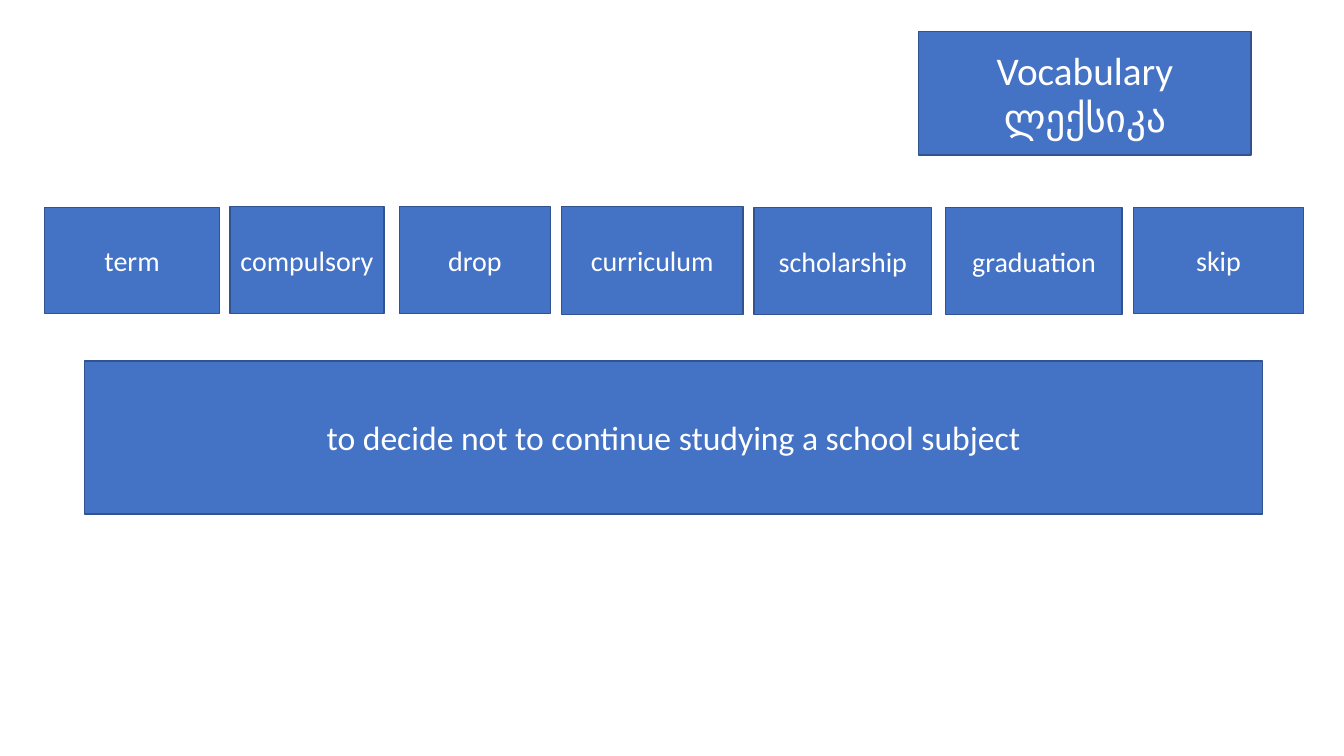
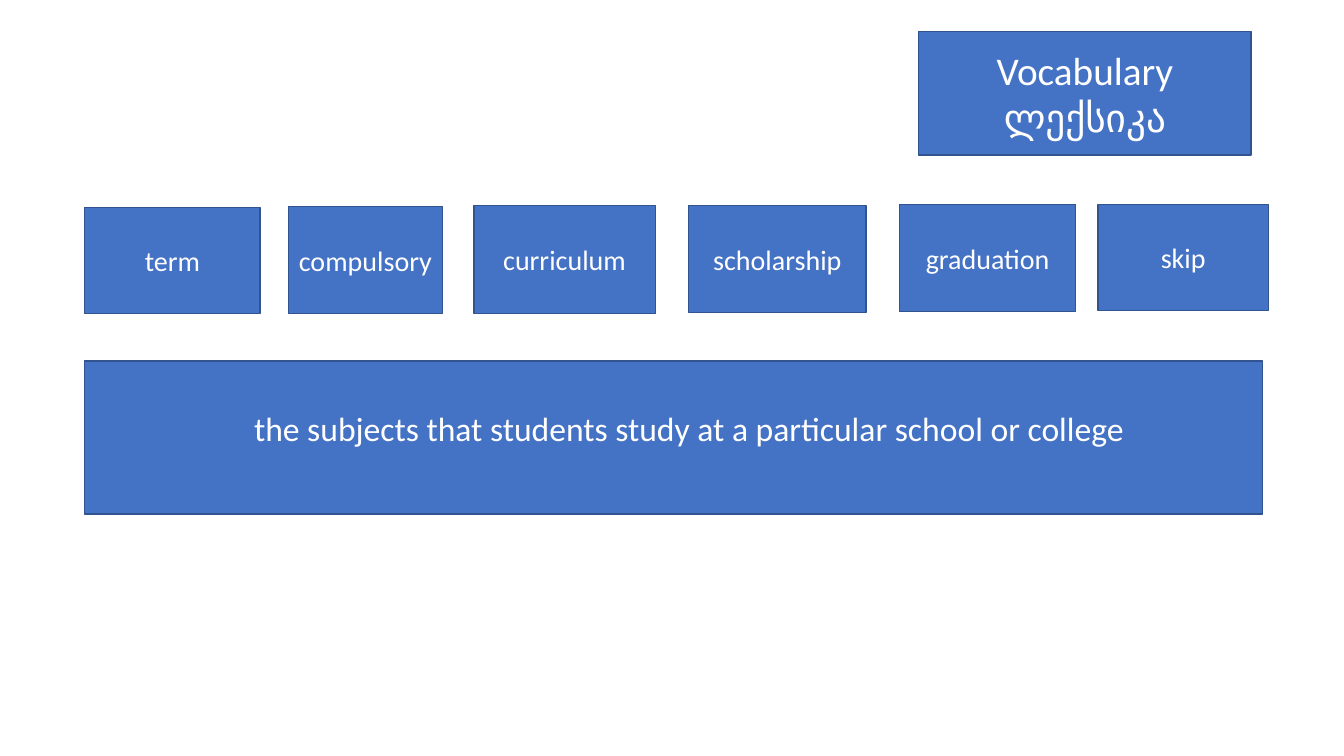
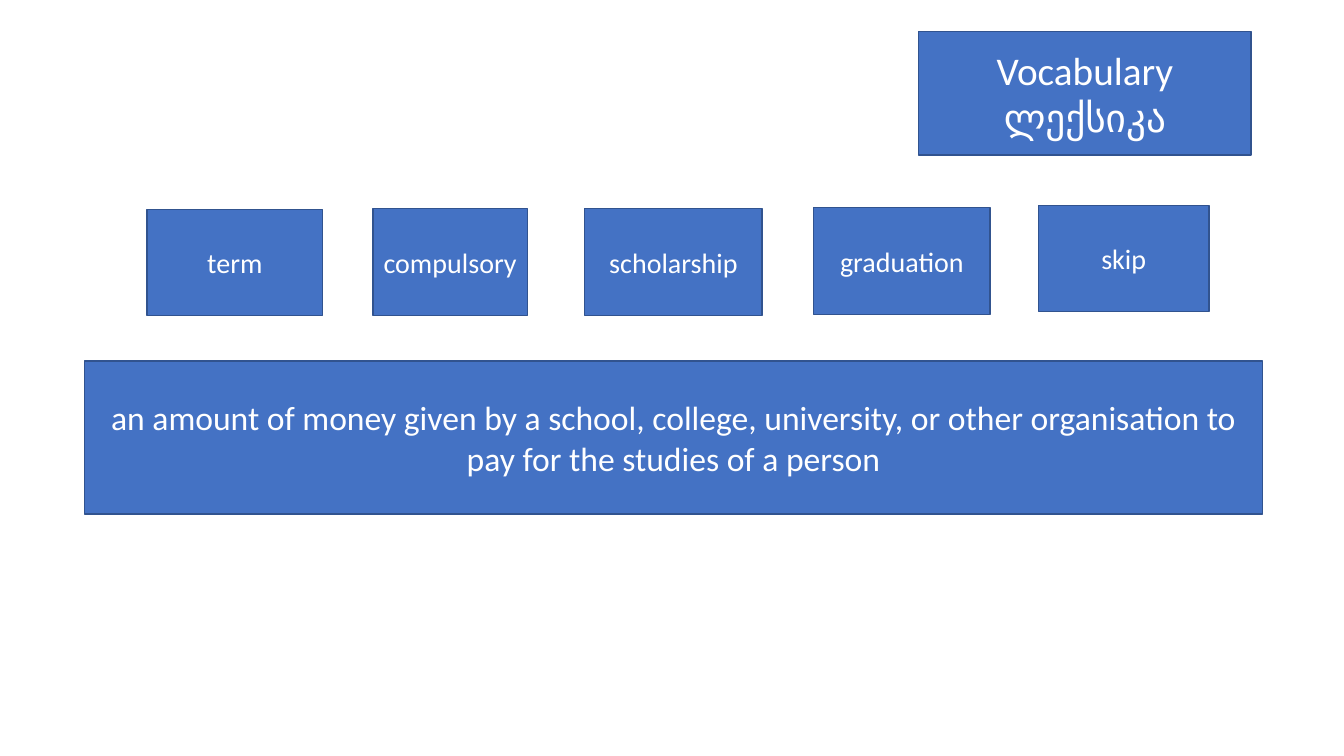
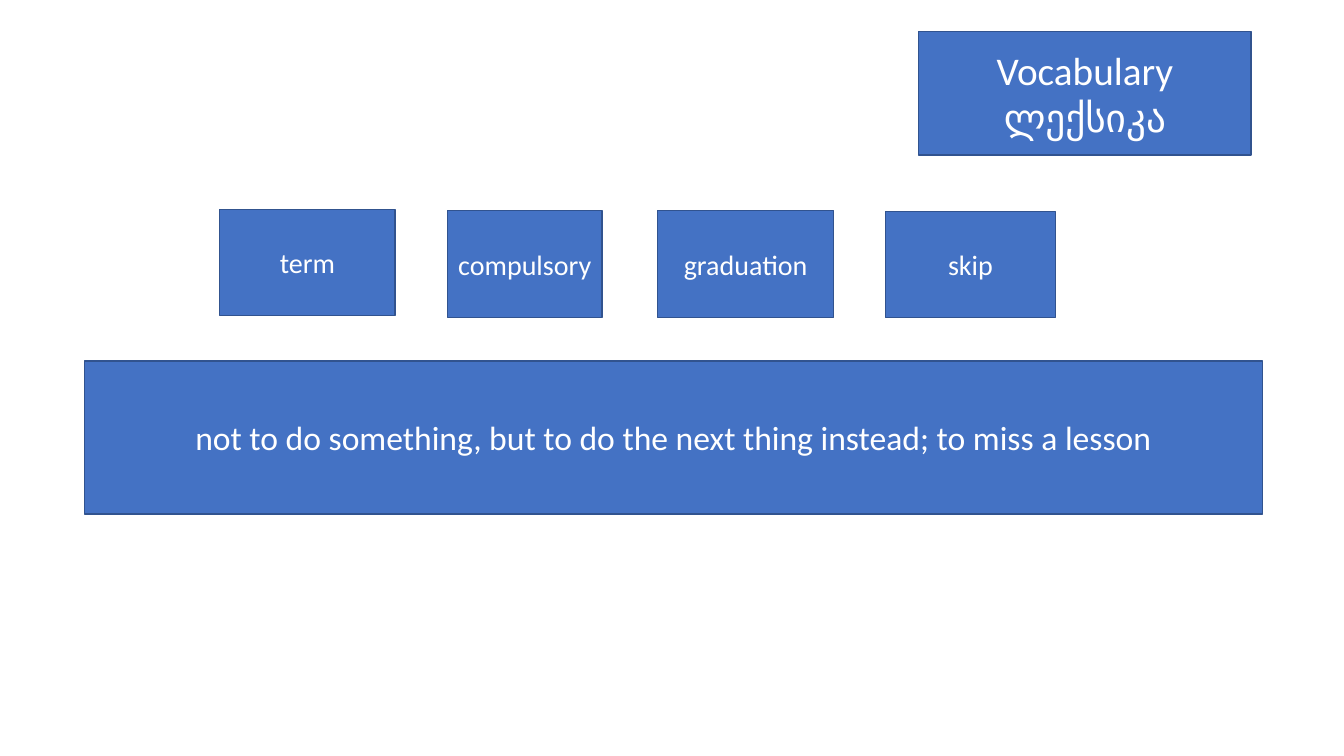
from dataclasses import dataclass

from pptx import Presentation
from pptx.dml.color import RGBColor
from pptx.enum.shapes import MSO_SHAPE as Shape
from pptx.enum.text import MSO_ANCHOR as Anchor, MSO_AUTO_SIZE as AutoSize, PP_ALIGN as Align
from pptx.util import Pt

SCALE = 9144  # EMU in one px, 100 px to the inch


@dataclass(frozen=True)
class Theme:
    fill: RGBColor = RGBColor(0x44, 0x72, 0xC4)
    line: RGBColor = RGBColor(0x31, 0x53, 0x8F)
    text: RGBColor = RGBColor(0xFF, 0xFF, 0xFF)
    font: str = "Calibri"
    title_size: int = 28
    word_size: int = 20
    definition_size: int = 24
    line_width: int = 1


THEME = Theme()
TITLE_LINES = ("Vocabulary", "ლექსიკა")
TITLE_BOX = (911, 31, 330, 123)
DEFINITION_BOX = (84, 358, 1168, 152)
WORD_SIZES = {
    "term": (174, 105),
    "compulsory": (153, 106),
    "drop": (150, 106),
    "curriculum": (180, 107),
    "scholarship": (176, 106),
    "graduation": (175, 106),
    "skip": (169, 105),
}

# Each slide: left and top of every word card, the definition, and the
# place of the definition text inside its panel (None for centred).
SLIDES = [
    ({"term": (44, 206), "compulsory": (228, 205), "drop": (396, 205),
      "curriculum": (557, 205), "scholarship": (748, 206),
      "graduation": (938, 206), "skip": (1124, 206)},
     "to decide not to continue studying a school subject", None),
    ({"term": (84, 206), "compulsory": (286, 205), "curriculum": (470, 204),
      "scholarship": (683, 204), "graduation": (892, 203), "skip": (1089, 203)},
     "the subjects that students study at a particular school or college",
     (134, 42, 931, 91)),
    ({"term": (146, 208), "compulsory": (370, 207), "scholarship": (580, 207),
      "graduation": (807, 206), "skip": (1030, 204)},
     "an amount of money given by a school, college, university, or other "
     "organisation to pay for the studies of a person", None),
    ({"term": (218, 208), "compulsory": (444, 209), "graduation": (652, 209),
      "skip": (878, 210)},
     "not to do something, but to do the next thing instead; to miss a lesson", None),
]


def px(*lengths):
    return [length * SCALE for length in lengths]


def paint(shape):
    shape.fill.solid()
    shape.fill.fore_color.rgb = THEME.fill
    shape.line.color.rgb = THEME.line
    shape.line.width = Pt(THEME.line_width)
    shape.shadow.inherit = False


def write(shape, lines, size, anchor=Anchor.MIDDLE):
    frame = shape.text_frame
    frame.word_wrap = True
    frame.auto_size = AutoSize.NONE
    frame.vertical_anchor = anchor
    for index, line in enumerate(lines):
        para = frame.add_paragraph() if index else frame.paragraphs[0]
        para.alignment = Align.CENTER
        span = para.add_run()
        span.text = line
        span.font.name = THEME.font
        span.font.size = Pt(size)
        span.font.color.rgb = THEME.text


def add_panel(page, box):
    panel = page.shapes.add_shape(Shape.RECTANGLE, *px(*box))
    paint(panel)
    return panel


def add_title(page, box):
    title = page.shapes.title
    title.left, title.top, title.width, title.height = px(*box)
    paint(title)
    write(title, TITLE_LINES, THEME.title_size)


def add_words(page, places):
    for word, place in places.items():
        write(add_panel(page, place + WORD_SIZES[word]), [word], THEME.word_size)


def add_definition(page, box, text, text_place):
    """Draw the panel; text_place is a text box relative to its corner."""
    target = add_panel(page, box)
    anchor = Anchor.MIDDLE
    if text_place:
        left, top, width, height = text_place
        target = page.shapes.add_textbox(*px(box[0] + left, box[1] + top, width, height))
        anchor = Anchor.TOP
    write(target, [text], THEME.definition_size, anchor)


def main():
    deck = Presentation()
    deck.slide_width, deck.slide_height = px(1333, 750)
    title_only = deck.slide_layouts[5]
    for places, definition, text_place in SLIDES:
        page = deck.slides.add_slide(title_only)
        add_title(page, TITLE_BOX)
        add_words(page, places)
        add_definition(page, DEFINITION_BOX, definition, text_place)
    deck.save("out.pptx")


if __name__ == "__main__":
    main()
